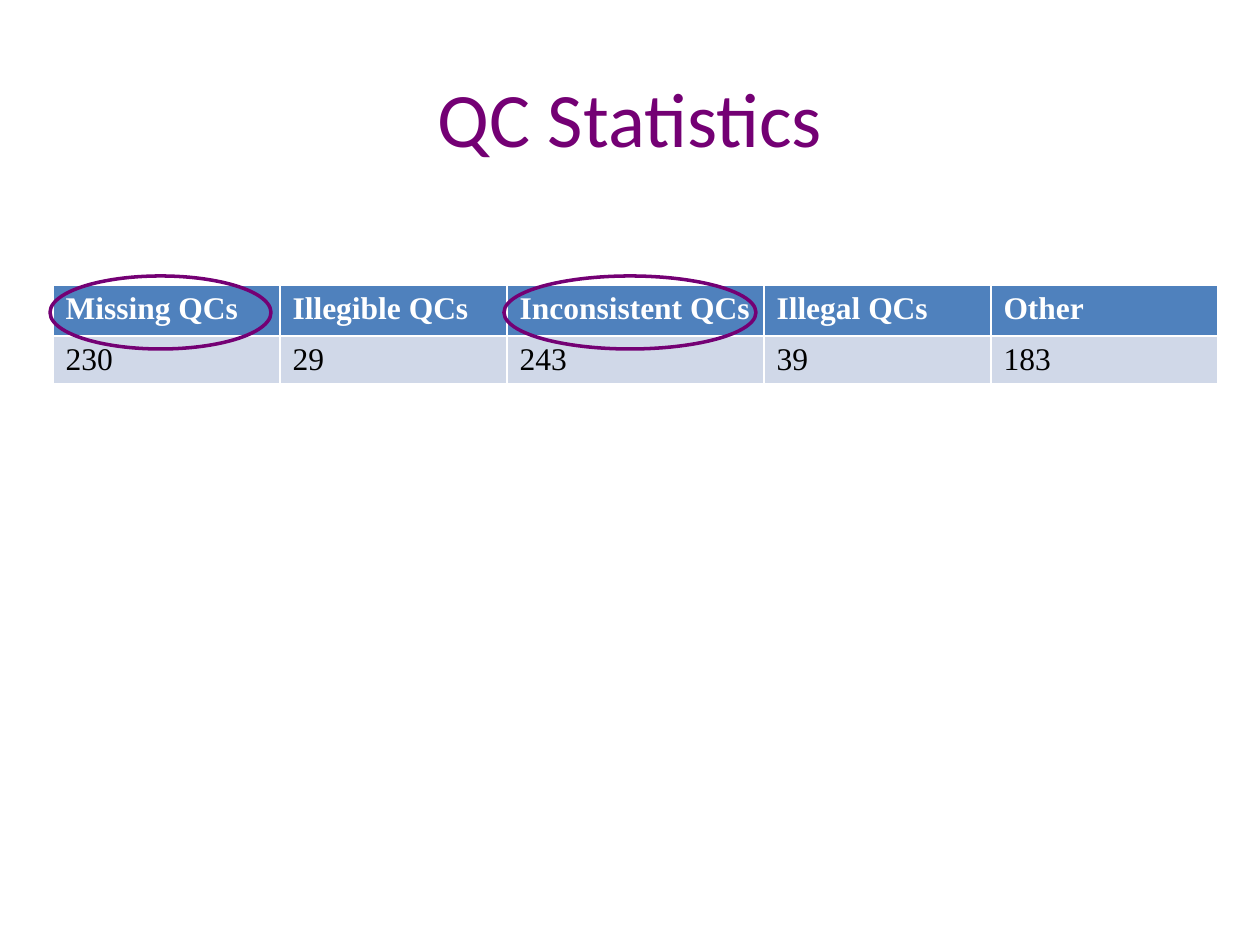
from dataclasses import dataclass

from pptx import Presentation
from pptx.dml.color import RGBColor as RGB
from pptx.enum.shapes import MSO_SHAPE as Kind
from pptx.enum.text import MSO_ANCHOR as Anchor, PP_ALIGN as Align
from pptx.util import Pt


@dataclass(frozen=True)
class Theme:
    plum: RGB = RGB(0x74, 0x00, 0x74)
    blue: RGB = RGB(0x4F, 0x81, 0xBD)
    pale: RGB = RGB(0xD0, 0xD8, 0xE8)
    white: RGB = RGB(0xFF, 0xFF, 0xFF)
    black: RGB = RGB(0x00, 0x00, 0x00)
    head: str = "Calibri"
    body: str = "Times New Roman"
    big: int = 44
    text: int = 18
    line: int = 2


look = Theme()
SCALE = 914400 / 126


def px(*vals):
    return [round(v * SCALE) for v in vals]


def write(frame, text, face, size, color, bold=False):
    run = frame.paragraphs[0].add_run()
    run.text = text
    font = run.font
    font.name, font.size, font.bold = face, Pt(size), bold
    font.color.rgb = color


deck = Presentation()
deck.slide_width, deck.slide_height = px(1260, 945)
slide = deck.slides.add_slide(deck.slide_layouts[5])

# Title
title = slide.shapes.title
title.left, title.top, title.width, title.height = px(63, 38, 1134, 158)
frame = title.text_frame
frame.vertical_anchor = Anchor.MIDDLE
frame.paragraphs[0].alignment = Align.CENTER
write(frame, "QC Statistics", look.head, look.big, look.plum)

# Error counts; the default table style draws the white borders
counts = {
    "Missing QCs": 230,
    "Illegible QCs": 29,
    "Inconsistent QCs": 243,
    "Illegal QCs": 39,
    "Other": 183,
}
widths = [227, 227, 257, 227, 227]
heights = [51, 41]
area = px(53, 285, sum(widths), sum(heights))
table = slide.shapes.add_table(2, len(counts), *area).table
for row, tall in zip(table.rows, px(*heights)):
    row.height = tall
for col, wide in zip(table.columns, px(*widths)):
    col.width = wide

rows = [
    (counts.keys(), look.blue, look.white, True),
    (counts.values(), look.pale, look.black, False),
]
for r, (items, fill, color, bold) in enumerate(rows):
    for c, item in enumerate(items):
        cell = table.cell(r, c)
        cell.fill.solid()
        cell.fill.fore_color.rgb = fill
        write(cell.text_frame, str(item), look.body, look.text, color, bold)

# Rings around the two most frequent errors
for left, wide in [(50, 221), (504, 252)]:
    ring = slide.shapes.add_shape(Kind.OVAL, *px(left, 276, wide, 73))
    ring.shadow.inherit = False
    ring.fill.background()
    ring.line.color.rgb = look.plum
    ring.line.width = Pt(look.line)

deck.save("out.pptx")
